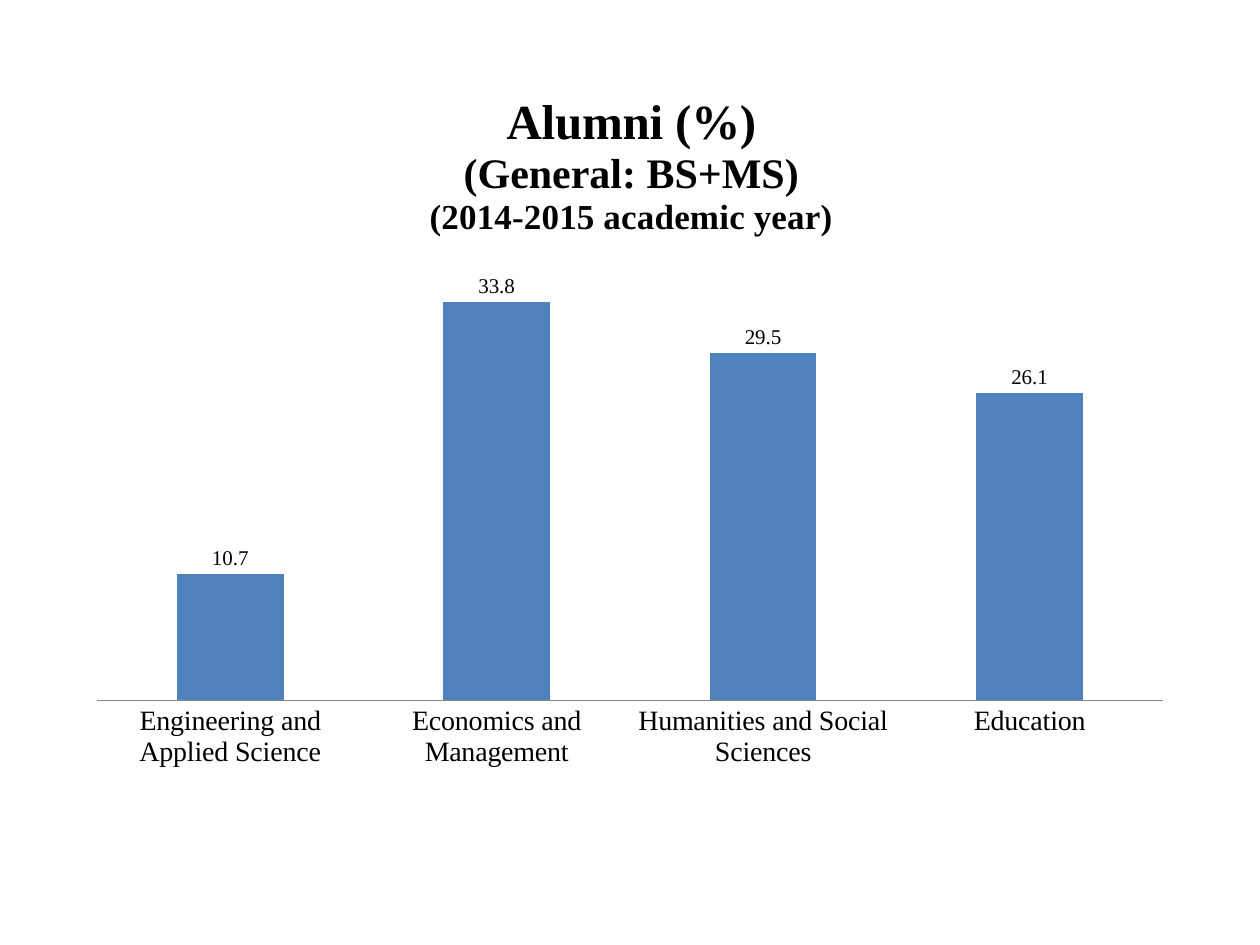
from lxml.etree import SubElement
from pptx import Presentation
from pptx.chart.data import CategoryChartData
from pptx.dml.color import RGBColor
from pptx.enum.chart import XL_CHART_TYPE, XL_LABEL_POSITION, XL_TICK_MARK
from pptx.oxml.ns import qn
from pptx.util import Emu, Pt

FACE = "Times New Roman"
SHARES = {
    "Engineering and Applied Science": 10.7,
    "Economics and Management": 33.8,
    "Humanities and Social Sciences": 29.5,
    "Education": 26.1,
}
HEADING = [
    ("Alumni (%)", 28),
    ("(General: BS+MS)", 24),
    ("(2014-2015 academic year)", 20),
]


def px(n):
    return Emu(round(n * 914400 / 126))


def color(code):
    return RGBColor.from_string(code)


def style(font, size, bold=False, tint="000000", face=FACE):
    font.name = face
    font.size = Pt(size)
    font.bold = bold
    font.color.rgb = color(tint)


def write(para, text, **form):
    run = para.add_run()
    run.text = text
    style(run.font, **form)


def place(node, spot, **parts):
    for old in node.findall(qn("c:layout")):
        node.remove(old)
    layout = node.makeelement(qn("c:layout"))
    node.insert(spot, layout)
    manual = SubElement(layout, qn("c:manualLayout"))
    for key, value in parts.items():
        SubElement(manual, qn("c:" + key)).set("val", str(value))


def add_title(chart):
    frame = chart.chart_title.text_frame
    for i, (text, size) in enumerate(HEADING):
        para = frame.add_paragraph() if i else frame.paragraphs[0]
        write(para, text, size=size, bold=True)
    place(chart.chart_title.element, 1,
          xMode="edge", yMode="edge", x=0.32, y=0.04)


def set_axes(chart):
    names = chart.category_axis
    names.major_tick_mark = XL_TICK_MARK.NONE
    names.format.line.color.rgb = color("868686")
    style(names.tick_labels.font, 16)
    values = chart.value_axis
    values.minimum_scale, values.maximum_scale = 0, 40
    values.has_major_gridlines = False
    values.visible = False


def set_bars(chart):
    plot = chart.plots[0]
    plot.gap_width, plot.overlap = 150, -25
    plot.vary_by_categories = False
    bars = plot.series[0]
    bars.format.fill.solid()
    bars.format.fill.fore_color.rgb = color("4F81BD")
    labels = bars.data_labels
    labels.show_value = True
    labels.position = XL_LABEL_POSITION.OUTSIDE_END
    style(labels.font, 12)


def add_bars(slide, x, y, w, h):
    data = CategoryChartData()
    data.categories = list(SHARES)
    data.add_series("Series 1", list(SHARES.values()))
    chart = slide.shapes.add_chart(
        XL_CHART_TYPE.COLUMN_CLUSTERED, px(x), px(y), px(w), px(h), data
    ).chart
    style(chart.font, 10, face="Calibri")
    chart.has_legend = False
    add_title(chart)
    set_axes(chart)
    set_bars(chart)
    area = chart.element.find(".//" + qn("c:plotArea"))
    place(area, 0, layoutTarget="inner", xMode="edge", yMode="edge",
          x=0.03, y=0.217, w=0.94, h=0.6)


def main():
    deck = Presentation()
    deck.slide_width, deck.slide_height = px(1260), px(945)
    slide = deck.slides.add_slide(deck.slide_layouts[6])
    add_bars(slide, 63, 59, 1134, 785)
    deck.save("out.pptx")


if __name__ == "__main__":
    main()
